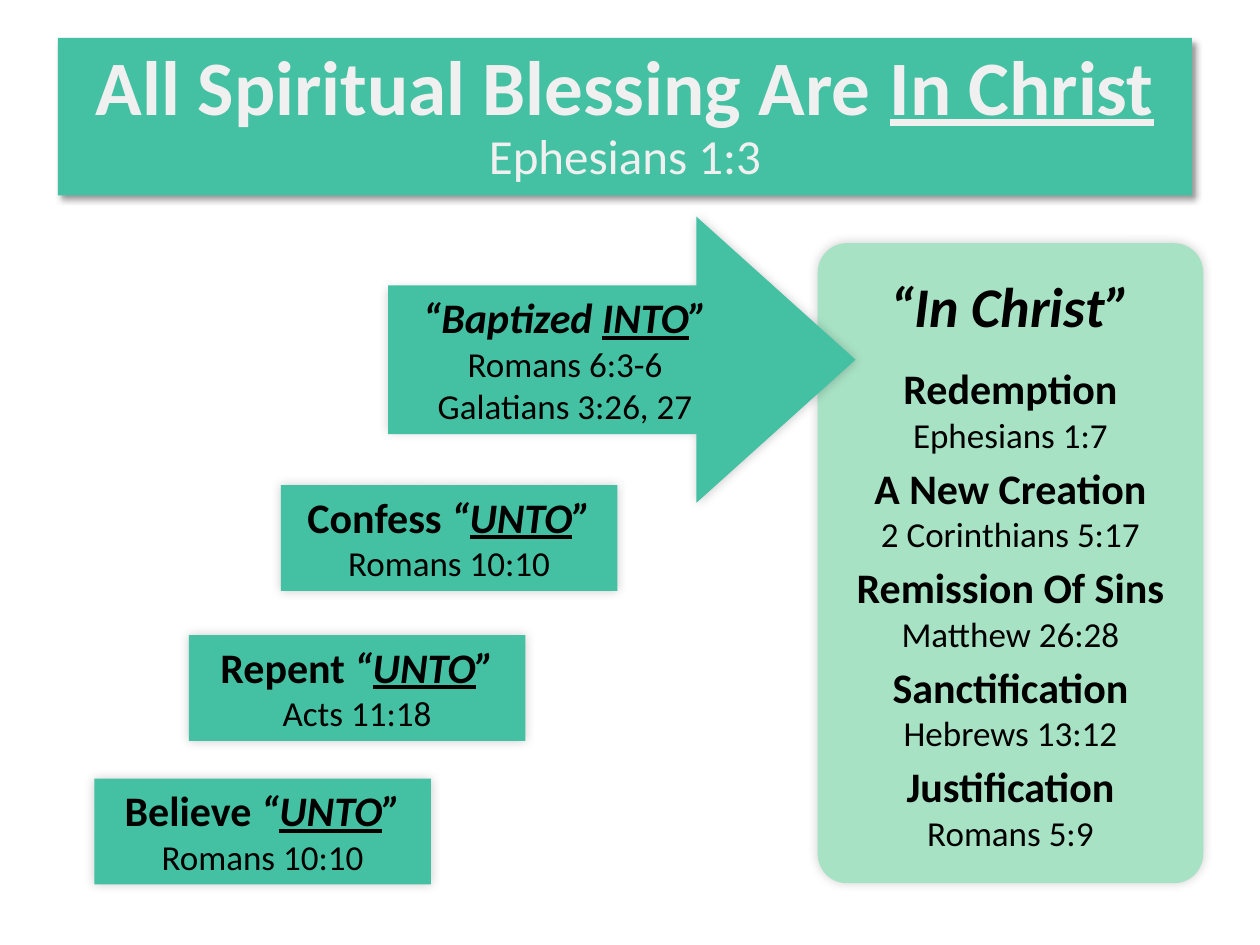
from lxml.etree import SubElement
from pptx import Presentation
from pptx.dml.color import RGBColor
from pptx.enum.shapes import MSO_SHAPE as SHAPE
from pptx.enum.text import MSO_ANCHOR as ANCHOR, MSO_AUTO_SIZE as AUTO_SIZE, PP_ALIGN as ALIGN
from pptx.oxml.ns import qn
from pptx.util import Inches, Pt

TEAL = RGBColor(0x44, 0xC1, 0xA3)
MINT = RGBColor(0xA8, 0xE2, 0xC5)
BLACK = RGBColor(0, 0, 0)
OFF_WHITE = RGBColor(0xF0, 0xF0, 0xF0)
FONT = "Calibri"

STEP_SIZE = (2.67, 0.84)
STEPS = [
    (0.75, 6.18, "Believe ", "Romans 10:10"),
    (1.5, 5.04, "Repent ", "Acts 11:18"),
    (2.23, 3.85, "Confess ", "Romans 10:10"),
]
BLESSINGS = [
    ("Redemption", "Ephesians 1:7"),
    ("A New Creation", "2 Corinthians 5:17"),
    ("Remission Of Sins", "Matthew 26:28"),
    ("Sanctification", "Hebrews 13:12"),
    ("Justification", "Romans 5:9"),
]


def add_run(paragraph, text, size, color=BLACK, bold=False, italic=False, underline=False):
    run = paragraph.add_run()
    run.text = text
    font = run.font
    font.name, font.size, font.color.rgb = FONT, Pt(size), color
    font.bold, font.italic, font.underline = bold, italic, underline


def add_shadow(shape, opacity=20, blur=6, distance=0, angle=315):
    """Give the shape an outer shadow: percent, points, points, degrees."""
    shape.shadow.inherit = False
    effects = shape._element.spPr.find(qn("a:effectLst"))
    outer = SubElement(effects, qn("a:outerShdw"), blurRad=str(Pt(blur)), dist=str(Pt(distance)),
                       dir=str(angle * 60000), algn="ctr", rotWithShape="0")
    color = SubElement(outer, qn("a:srgbClr"), val="000000")
    SubElement(color, qn("a:alpha"), val=str(opacity * 1000))


def add_block(slide, kind, box, fill, shadowed=True):
    block = slide.shapes.add_shape(kind, *map(Inches, box))
    block.fill.solid()
    block.fill.fore_color.rgb = fill
    block.line.fill.background()
    if shadowed:
        add_shadow(block)
    else:
        block.shadow.inherit = False
    return block


def write_lines(shape, lines):
    """Fill the shape with centred paragraphs, each a list of (text, size, styles)."""
    frame = shape.text_frame
    frame.word_wrap = True
    frame.auto_size = AUTO_SIZE.SHAPE_TO_FIT_TEXT
    frame.vertical_anchor = ANCHOR.TOP
    for index, runs in enumerate(lines):
        paragraph = frame.add_paragraph() if index else frame.paragraphs[0]
        paragraph.alignment = ALIGN.CENTER
        for text, size, styles in runs:
            add_run(paragraph, text, size, **styles)


def quoted(lead, word):
    """Runs of a heading whose last word is underlined inside italic quotes."""
    slanted = {"bold": True, "italic": True}
    return lead + [("“", 24, slanted)] * (not lead) + [
        (word, 24, {**slanted, "underline": True}), ("”", 24, slanted)]


def add_title(slide, box):
    title = slide.shapes.title
    title.left, title.top, title.width, title.height = map(Inches, box)
    title.fill.solid()
    title.fill.fore_color.rgb = TEAL
    add_shadow(title, opacity=40, blur=4, distance=3, angle=45)
    frame = title.text_frame
    frame.word_wrap = True
    frame.auto_size = AUTO_SIZE.NONE
    frame.vertical_anchor = ANCHOR.MIDDLE
    paragraph = frame.paragraphs[0]
    paragraph.alignment = ALIGN.CENTER
    paragraph.line_spacing = 0.9
    add_run(paragraph, "All Spiritual Blessing Are ", 44, OFF_WHITE, bold=True)
    add_run(paragraph, "In Christ", 44, OFF_WHITE, bold=True, underline=True)
    paragraph.add_line_break()
    add_run(paragraph, "Ephesians 1:3", 28, OFF_WHITE)


def add_blessings(slide, box):
    left, top, width, height = box
    panel = add_block(slide, SHAPE.ROUNDED_RECTANGLE, box, MINT)
    panel.adjustments[0] = 0.076

    def add_text(offset, text_height, lines):
        text_box = slide.shapes.add_textbox(
            Inches(left), Inches(top + offset), Inches(width), Inches(text_height))
        write_lines(text_box, lines)

    add_text(0.18, 0.64, [[("“In Christ”", 32, {"bold": True, "italic": True})]])
    for index, (blessing, verse) in enumerate(BLESSINGS):
        add_text(0.9 + 0.79 * index, 0.84,
                 [[(blessing, 24, {"bold": True})], [(verse, 20, {})]])


def add_step(slide, box, action, verse):
    step = add_block(slide, SHAPE.RECTANGLE, box, TEAL)
    lead = [(action, 24, {"bold": True}), ("“", 24, {"bold": True, "italic": True})]
    write_lines(step, [quoted(lead, "UNTO"), [(verse, 20, {})]])


def add_baptism_arrow(slide, box):
    left, top, width, height = box
    arrow = add_block(slide, SHAPE.RIGHT_ARROW, box, TEAL)
    arrow.adjustments[0], arrow.adjustments[1] = 0.5, 0.556
    label_height = 1.18
    label_box = (left, top + (height - label_height) / 2, 2.81, label_height)
    label = add_block(slide, SHAPE.RECTANGLE, label_box, TEAL, shadowed=False)
    lead = [("“Baptized ", 24, {"bold": True, "italic": True})]
    write_lines(label, [quoted(lead, "INTO"),
                        [("Romans 6:3-6", 20, {})],
                        [("Galatians 3:26, 27", 20, {})]])


def main():
    deck = Presentation()
    deck.slide_width, deck.slide_height = Inches(10), Inches(7.5)
    slide = deck.slides.add_slide(deck.slide_layouts[5])
    add_title(slide, (0.46, 0.3, 9, 1.25))
    add_blessings(slide, (6.49, 1.93, 3.06, 5.08))
    for left, top, action, verse in STEPS:
        add_step(slide, (left, top, *STEP_SIZE), action, verse)
    add_baptism_arrow(slide, (3.08, 1.72, 3.71, 2.27))
    deck.save("out.pptx")


if __name__ == "__main__":
    main()
